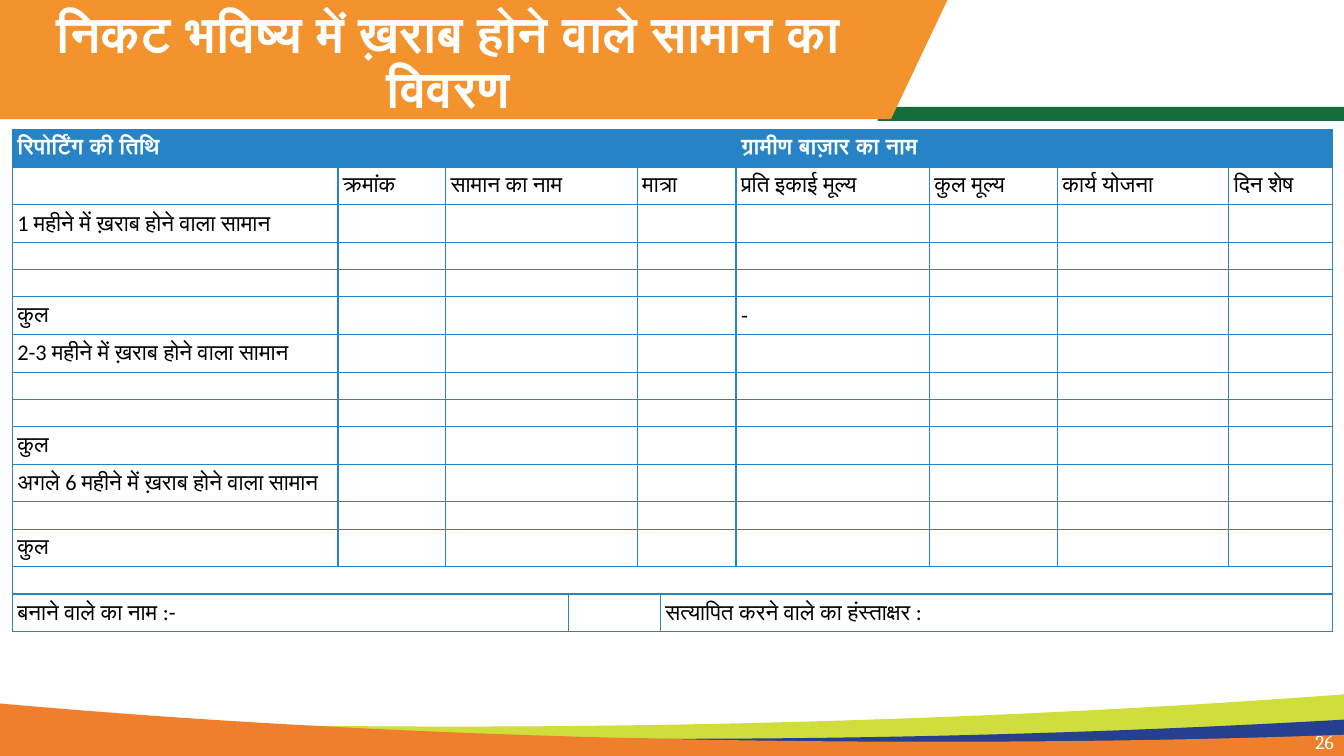
from itertools import pairwise

from lxml import etree
from pptx import Presentation
from pptx.dml.color import RGBColor
from pptx.enum.shapes import MSO_SHAPE
from pptx.enum.text import MSO_ANCHOR, PP_ALIGN
from pptx.oxml.ns import qn
from pptx.util import Pt

RECTANGLE = MSO_SHAPE.RECTANGLE
MIDDLE = MSO_ANCHOR.MIDDLE
CENTER, RIGHT = PP_ALIGN.CENTER, PP_ALIGN.RIGHT

WHITE = RGBColor(0xFF, 0xFF, 0xFF)
BLACK = RGBColor(0, 0, 0)
GREEN = RGBColor(0x15, 0x6D, 0x3C)
AMBER = RGBColor(0xF3, 0x93, 0x2D)
LIME = RGBColor(0xCF, 0xDD, 0x3D)
NAVY = RGBColor(0x25, 0x40, 0x8F)
ORANGE = RGBColor(0xEF, 0x7F, 0x2D)
BLUE = RGBColor(0x26, 0x83, 0xC6)

PAGE_WIDTH, PAGE_HEIGHT = 960, 540

WAVES = [
    (LIME, [(0, 17.3), (104.4, 20.9), (213.1, 23), (324, 23),
            (550.8, 23), (766.1, 14.4), (960, 0)]),
    (NAVY, [(0, 18), (151.2, 26.6), (313.2, 31.7), (480, 31.7),
            (648, 31.7), (809.3, 26.6), (960, 18)]),
    (ORANGE, [(0, 6.5), (201.6, 24.5), (427, 33.8), (664.6, 33.8),
              (766.1, 33.8), (864.7, 32.4), (960, 28.8)]),
]

COLUMN_WIDTHS = [232.6, 77, 87.8, 49, 16.6, 54, 138.2, 91.4, 122.4, 74.2]
TALL_ROW, SHORT_ROW = 26.9, 19.5
CELL_INSET = 3.6
HEADER_STARTS = [0, 4, 6]
BODY_STARTS = [0, 1, 2, 4, 6, 7, 8, 9]
SIGNATURE_STARTS = [0, 3, 5]
TOTAL = "कुल"
ROWS = [
    (HEADER_STARTS, ["रिपोर्टिंग की तिथि", "", "ग्रामीण बाज़ार का नाम"]),
    (BODY_STARTS, ["", "क्रमांक", "सामान का नाम", "मात्रा", "प्रति इकाई मूल्य",
                   "कुल मूल्य", "कार्य योजना", "दिन शेष"]),
    (BODY_STARTS, ["1 महीने में ख़राब होने वाला सामान"]),
    (BODY_STARTS, []),
    (BODY_STARTS, []),
    (BODY_STARTS, [TOTAL, "", "", "", "-"]),
    (BODY_STARTS, ["2-3 महीने में ख़राब होने वाला सामान"]),
    (BODY_STARTS, []),
    (BODY_STARTS, []),
    (BODY_STARTS, [TOTAL]),
    (BODY_STARTS, ["अगले 6 महीने में ख़राब होने वाला सामान"]),
    (BODY_STARTS, []),
    (BODY_STARTS, [TOTAL]),
    ([0], []),
    (SIGNATURE_STARTS, ["बनाने वाले का नाम :-", "", "सत्यापित करने वाले का हंस्ताक्षर :"]),
]


def paint(shape, color):
    shape.shadow.inherit = False
    shape.fill.solid()
    shape.fill.fore_color.rgb = color
    shape.line.fill.background()


def add_outline(page, points, color):
    corners = [(Pt(x), Pt(y)) for x, y in points]
    builder = page.shapes.build_freeform(*corners[0])
    builder.add_line_segments(corners[1:], close=True)
    outline = builder.convert_to_shape()
    paint(outline, color)
    return outline


def bend_edge(outline, curve_count):
    segments = list(outline._element.iter(qn("a:lnTo")))
    for index in range(curve_count):
        group = segments[3 * index:3 * index + 3]
        curve = etree.Element(qn("a:cubicBezTo"))
        group[0].addprevious(curve)
        for segment in group:
            curve.append(segment[0])
            segment.getparent().remove(segment)


def style(font, size, font_name, color, bold=False):
    font.size = Pt(size)
    font.name = font_name
    font.bold = bold
    font.color.rgb = color


def add_banner(page, left, top, width, height):
    stripe = page.shapes.add_shape(
        RECTANGLE, Pt(left + 627), Pt(top + 76.3), Pt(width - 627), Pt(10))
    paint(stripe, GREEN)
    banner = add_outline(page, [(left, top), (left + 676.8, top),
                                (left + 636.5, top + height), (left, top + height)], AMBER)
    title = page.shapes.title
    banner._element.addnext(title._element)
    title.left, title.top = Pt(left + 8.6), Pt(top + 37.4)
    title.width, title.height = Pt(623.5), Pt(55.4)
    frame = title.text_frame
    frame.text = "निकट भविष्य में ख़राब होने वाले सामान का विवरण"
    frame.word_wrap = True
    frame.vertical_anchor = MIDDLE
    frame.margin_bottom = Pt(43)
    paragraph = frame.paragraphs[0]
    paragraph.line_spacing = 0.9
    paragraph.alignment = CENTER
    style(paragraph.font, 36, "Cambria", WHITE, True)


def add_footer(page, left, top, width, height):
    for color, edge in WAVES:
        points = [(left + x, top + y) for x, y in edge]
        points += [(left + width, top + height), (left, top + height)]
        bend_edge(add_outline(page, points, color), len(edge) // 3)
    box = page.shapes.add_textbox(Pt(left + width - 32.6), Pt(top + 21), Pt(32.4), Pt(26))
    frame = box.text_frame
    frame.word_wrap = True
    frame.vertical_anchor = MIDDLE
    frame.text = "26"
    paragraph = frame.paragraphs[0]
    paragraph.alignment = RIGHT
    style(paragraph.font, 14, "Cambria", WHITE)


def add_borders(cell):
    properties = cell._tc.get_or_add_tcPr()
    for side in ("lnL", "lnR", "lnT", "lnB"):
        line = etree.SubElement(properties, qn(f"a:{side}"), w=str(Pt(1)))
        fill = etree.SubElement(line, qn("a:solidFill"))
        etree.SubElement(fill, qn("a:srgbClr"), val=str(BLUE))


def fill_cell(cell, text, is_header):
    cell.vertical_anchor = MIDDLE
    paragraph = cell.text_frame.paragraphs[0]
    if text:
        span = paragraph.add_run()
        span.text = text
        style(span.font, 16, "Calibri", WHITE if is_header else BLACK, is_header)
    else:
        etree.SubElement(paragraph._p, qn("a:endParaRPr"), sz="1000")


def add_goods_table(page, left, top, width):
    heights = [TALL_ROW if any(texts) else SHORT_ROW for _, texts in ROWS]
    table = page.shapes.add_table(
        len(ROWS), len(COLUMN_WIDTHS), Pt(left), Pt(top), Pt(width), Pt(sum(heights))).table
    table.first_row = table.horz_banding = False
    for column, column_width in zip(table.columns, COLUMN_WIDTHS):
        column.width = Pt(column_width)
    for row, (starts, texts) in enumerate(ROWS):
        table.rows[row].height = Pt(heights[row])
        is_header = row == 0
        labels = dict(zip(starts, texts))
        for column, cell in enumerate(table.rows[row].cells):
            cell.margin_left = cell.margin_right = Pt(CELL_INSET)
            cell.margin_top = cell.margin_bottom = Pt(CELL_INSET)
            add_borders(cell)
            if is_header:
                cell.fill.solid()
                cell.fill.fore_color.rgb = BLUE
            else:
                cell.fill.background()
            fill_cell(cell, labels.get(column, ""), is_header)
        for first, following in pairwise(starts + [len(COLUMN_WIDTHS)]):
            if following - first > 1:
                table.cell(row, first).merge(table.cell(row, following - 1))


def main():
    deck = Presentation()
    deck.slide_width, deck.slide_height = Pt(PAGE_WIDTH), Pt(PAGE_HEIGHT)
    page = deck.slides.add_slide(deck.slide_layouts[5])
    add_banner(page, 0, 0, PAGE_WIDTH, 85)
    add_footer(page, 0, 496, PAGE_WIDTH, 44)
    add_goods_table(page, 8.8, 92.5, sum(COLUMN_WIDTHS))
    deck.save("out.pptx")


if __name__ == "__main__":
    main()
